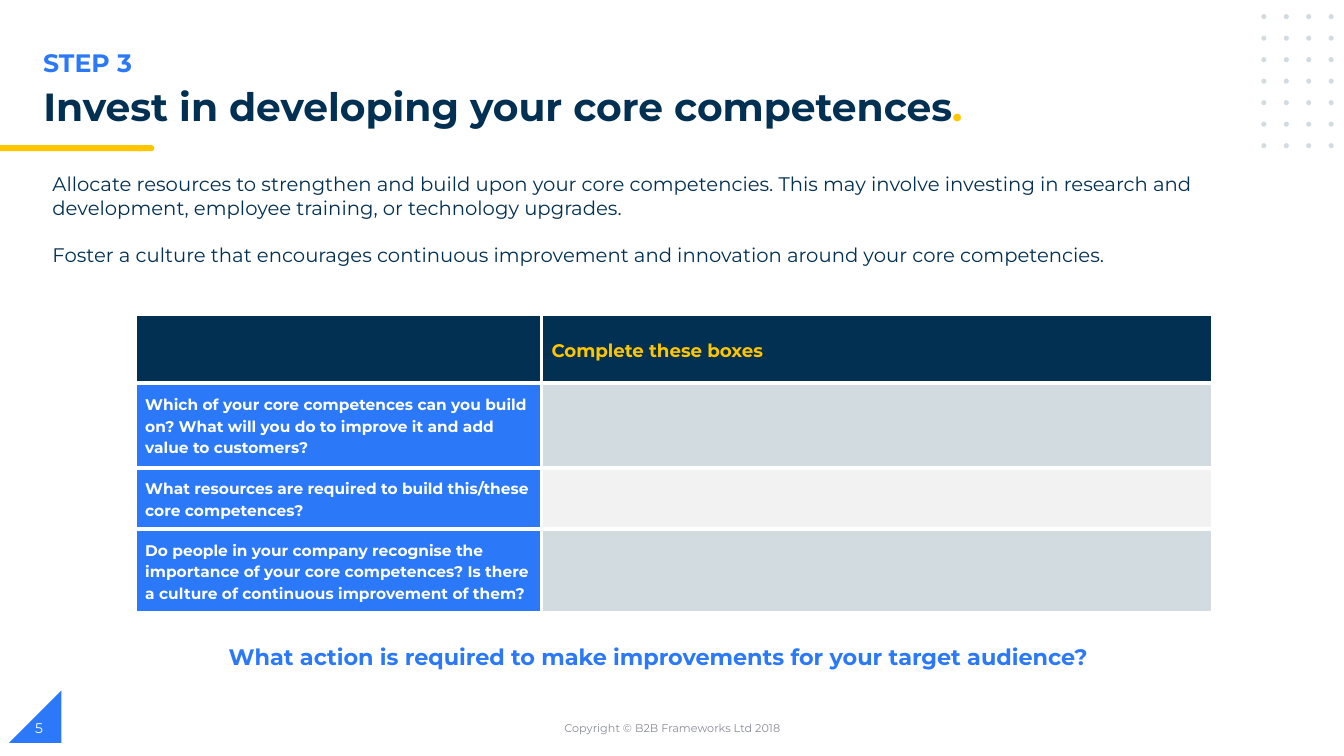
from pptx import Presentation
from pptx.dml.color import RGBColor
from pptx.enum.shapes import MSO_SHAPE as Shape
from pptx.enum.text import MSO_ANCHOR as Anchor, MSO_AUTO_SIZE as AutoSize, PP_ALIGN as Align
from pptx.oxml import parse_xml
from pptx.oxml.ns import nsdecls
from pptx.util import Inches, Pt

NAVY, BLUE, YELLOW, WHITE = "023053", "2B79F8", "FFC600", "FFFFFF"
MIST, PALE, GREY = "D1DBE0", "F2F2F2", "888C97"


def paint(target, color):
    target.fill.solid()
    target.fill.fore_color.rgb = RGBColor.from_string(color)


def add_span(para, text, size, color, bold=False):
    span = para.add_run()
    span.text = text
    span.font.name = "Montserrat"
    span.font.size = Pt(size)
    span.font.bold = bold
    span.font.color.rgb = RGBColor.from_string(color)


deck = Presentation()
deck.slide_width, deck.slide_height = Inches(13.33), Inches(7.5)
page = deck.slides.add_slide(deck.slide_layouts[1])

dots = [
    (Shape.OVAL, 12.51 + 0.2225 * column, 0.14 + 0.2135 * row, 0.05, 0.05, MIST)
    for row in range(7)
    for column in range(4)
]
decorations = [
    (Shape.RIGHT_TRIANGLE, 0.09, 6.85, 0.52, 0.52, BLUE),
    (Shape.FLOWCHART_TERMINATOR, 1.34, 1.44, 0.19, 0.06, YELLOW),
    (Shape.RECTANGLE, 0, 1.44, 1.41, 0.06, YELLOW),
]
for kind, left, top, width, height, color in decorations + dots:
    shape = page.shapes.add_shape(kind, Inches(left), Inches(top), Inches(width), Inches(height))
    shape.shadow.inherit = False
    shape.line.fill.background()
    paint(shape, color)
    if kind == Shape.RIGHT_TRIANGLE:
        shape._element.spPr.find("{*}xfrm").set("flipH", "1")

title = page.shapes.title
title.left, title.top, title.width, title.height = Inches(0.33), Inches(0.82), Inches(11.59), Inches(0.56)
title.text_frame.auto_size = AutoSize.NONE
title.text_frame.vertical_anchor = Anchor.TOP
para = title.text_frame.paragraphs[0]
para.alignment = Align.LEFT
para.line_spacing = 0.9
add_span(para, "Invest in developing your core competences", 28, NAVY, True)
add_span(para, ".", 28, YELLOW, True)

body = page.placeholders[1]
body.left, body.top, body.width, body.height = Inches(0.42), Inches(1.66), Inches(11.59), Inches(1.04)
body.text_frame.auto_size = AutoSize.NONE
advice = [
    "Allocate resources to strengthen and build upon your core competencies. This may involve "
    "investing in research and development, employee training, or technology upgrades.",
    "Foster a culture that encourages continuous improvement and innovation around your core competencies.",
]
for index, text in enumerate(advice):
    para = body.text_frame.paragraphs[0] if index == 0 else body.text_frame.add_paragraph()
    properties = para._p.get_or_add_pPr()
    properties.set("marL", "0")
    properties.set("indent", "0")
    properties.append(parse_xml(f"<a:buNone {nsdecls('a')}/>"))
    para.space_before = Pt(17 * index)
    add_span(para, text, 14, NAVY)

labels = [
    ("STEP 3", 0.33, 0.42, 6.69, 0.4, 18, BLUE, True, Align.LEFT, Anchor.TOP),
    ("Copyright © B2B Frameworks Ltd 2018", 4.42, 7.02, 4.5, 0.4, 8, GREY, False, Align.CENTER, Anchor.MIDDLE),
    ("5", 0.25, 7.02, 3, 0.4, 10, WHITE, False, Align.LEFT, Anchor.MIDDLE),
    ("What action is required to make improvements for your target audience?",
     2.17, 6.33, 8.83, 0.37, 16, BLUE, True, Align.LEFT, Anchor.TOP),
]
for text, left, top, width, height, size, color, bold, alignment, anchor in labels:
    box = page.shapes.add_textbox(Inches(left), Inches(top), Inches(width), Inches(height))
    box.text_frame.word_wrap = True
    box.text_frame.vertical_anchor = anchor
    para = box.text_frame.paragraphs[0]
    para.alignment = alignment
    add_span(para, text, size, color, bold)

rows = [
    (0.68, "", "Complete these boxes", NAVY, NAVY),
    (0.84, "Which of your core competences can you build on? What will you do to improve it "
     "and add value to customers?", "", BLUE, MIST),
    (0.61, "What resources are required to build this/these core competences?", "", BLUE, PALE),
    (0.83, "Do people in your company recognise the importance of your core competences? "
     "Is there a culture of continuous improvement of them?", "", BLUE, MIST),
]
table = page.shapes.add_table(4, 2, Inches(1.34), Inches(3.12), Inches(10.69), Inches(2.96)).table
table.columns[0].width, table.columns[1].width = Inches(4.03), Inches(6.66)
for row_index, (height, question, answer, question_fill, answer_fill) in enumerate(rows):
    table.rows[row_index].height = Inches(height)
    for column, (text, fill) in enumerate([(question, question_fill), (answer, answer_fill)]):
        cell = table.cell(row_index, column)
        cell.vertical_anchor = Anchor.MIDDLE
        cell.margin_left = cell.margin_right = Inches(0.1)
        cell.margin_top = cell.margin_bottom = 0
        paint(cell, fill)
        for position, side in enumerate(["lnL", "lnR", "lnT", "lnB"]):
            border = parse_xml(
                f'<a:{side} {nsdecls("a")} w="38100"><a:solidFill><a:srgbClr val="{WHITE}"/>'
                f"</a:solidFill></a:{side}>"
            )
            cell._tc.get_or_add_tcPr().insert(position, border)
        if text:
            para = cell.text_frame.paragraphs[0]
            para.line_spacing = 1.15
            size, color = (13, YELLOW) if row_index == 0 else (11, WHITE)
            add_span(para, text, size, color, True)

deck.save("out.pptx")
